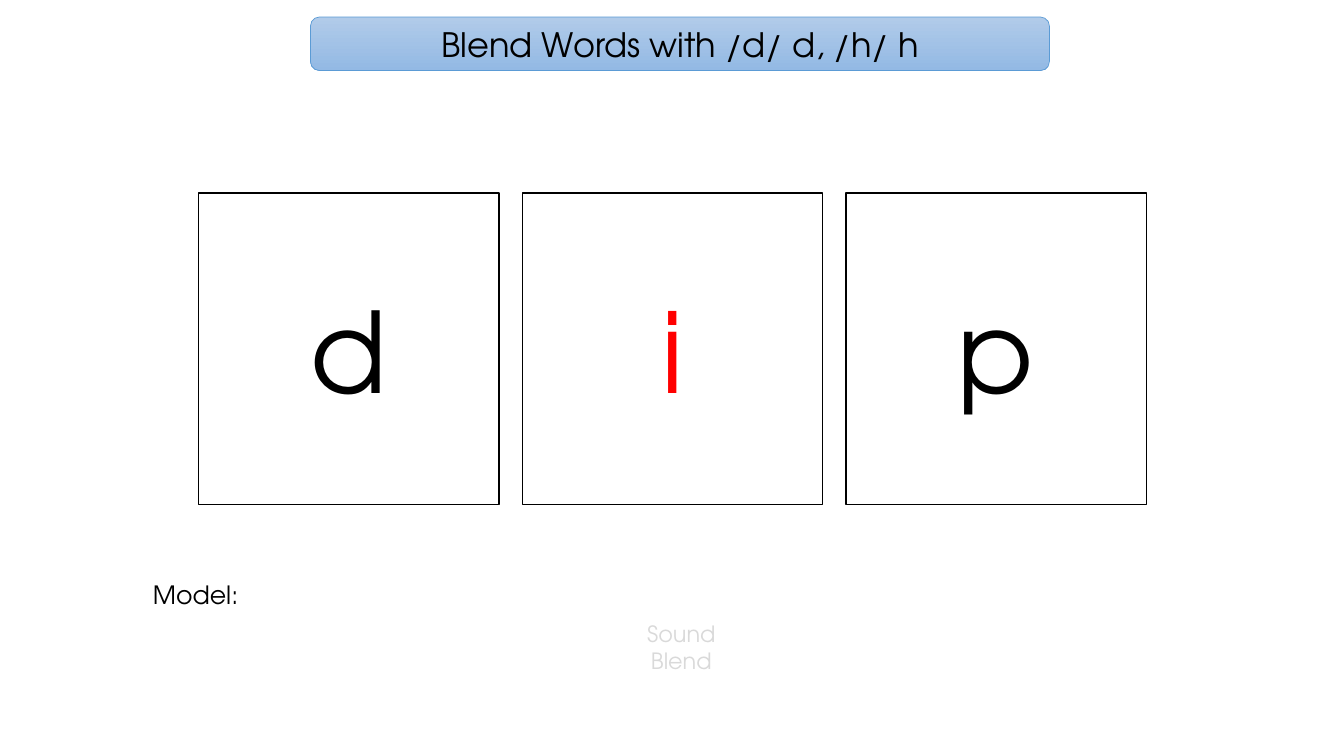
from pptx import Presentation
from pptx import util as u
from pptx.dml import color
from pptx.enum import shapes, text

FONT = "TeX Gyre Adventor"
BLACK = "000000"


def rgb(value):
    return color.RGBColor.from_string(value)


def write(frame, words, size, ink, align):
    frame.word_wrap = True
    frame.text = words
    for para in frame.paragraphs:
        para.alignment = align
        for span in para.runs:
            span.font.name = FONT
            span.font.size = u.Pt(size)
            span.font.color.rgb = rgb(ink)


def add_label(page, bounds, words, size, ink, align):
    box = page.shapes.add_textbox(*map(u.Pt, bounds))
    write(box.text_frame, words, size, ink, align)
    box.text_frame.auto_size = text.MSO_AUTO_SIZE.SHAPE_TO_FIT_TEXT


def add_panel(page, kind, bounds, words, size, ink, outline, weight):
    panel = page.shapes.add_shape(kind, *map(u.Pt, bounds))
    panel.shadow.inherit = False
    panel.line.color.rgb = rgb(outline)
    panel.line.width = u.Pt(weight)
    panel.text_frame.vertical_anchor = text.MSO_ANCHOR.MIDDLE
    write(panel.text_frame, words, size, ink, text.PP_ALIGN.CENTER)
    return panel


def add_letter_card(page, index, letter, ink):
    bounds = (141.8 + index * 231.2, 138, 214.6, 222.5)
    card = add_panel(page, shapes.MSO_SHAPE.RECTANGLE, bounds,
                     letter, 80, ink, BLACK, 1)
    card.fill.solid()
    card.fill.fore_color.rgb = rgb("FFFFFF")


def add_title(page, words):
    title = add_panel(page, shapes.MSO_SHAPE.ROUNDED_RECTANGLE,
                      (221.8, 12.2, 527.8, 38.2), words, 24, BLACK, "5B9BD5", 0.5)
    title.fill.gradient()
    title.fill.gradient_angle = 270
    for stop, shade in zip(title.fill.gradient_stops, ("B1CBE9", "93B9E4")):
        stop.color.rgb = rgb(shade)


def main():
    deck = Presentation()
    deck.slide_width, deck.slide_height = u.Pt(960), u.Pt(540)
    page = deck.slides.add_slide(deck.slide_layouts[6])
    add_label(page, (32.4, 439.2, 908.6, 46), "Sound\nBlend", 16, "D9D9D9",
              text.PP_ALIGN.CENTER)
    add_label(page, (102.2, 410.4, 139, 29), "Model:", 18, BLACK,
              text.PP_ALIGN.LEFT)
    for index, (letter, ink) in enumerate([("d", BLACK), ("i", "FF0000"), ("p", BLACK)]):
        add_letter_card(page, index, letter, ink)
    add_title(page, "Blend Words with /d/ d, /h/ h")
    deck.save("out.pptx")


if __name__ == "__main__":
    main()
